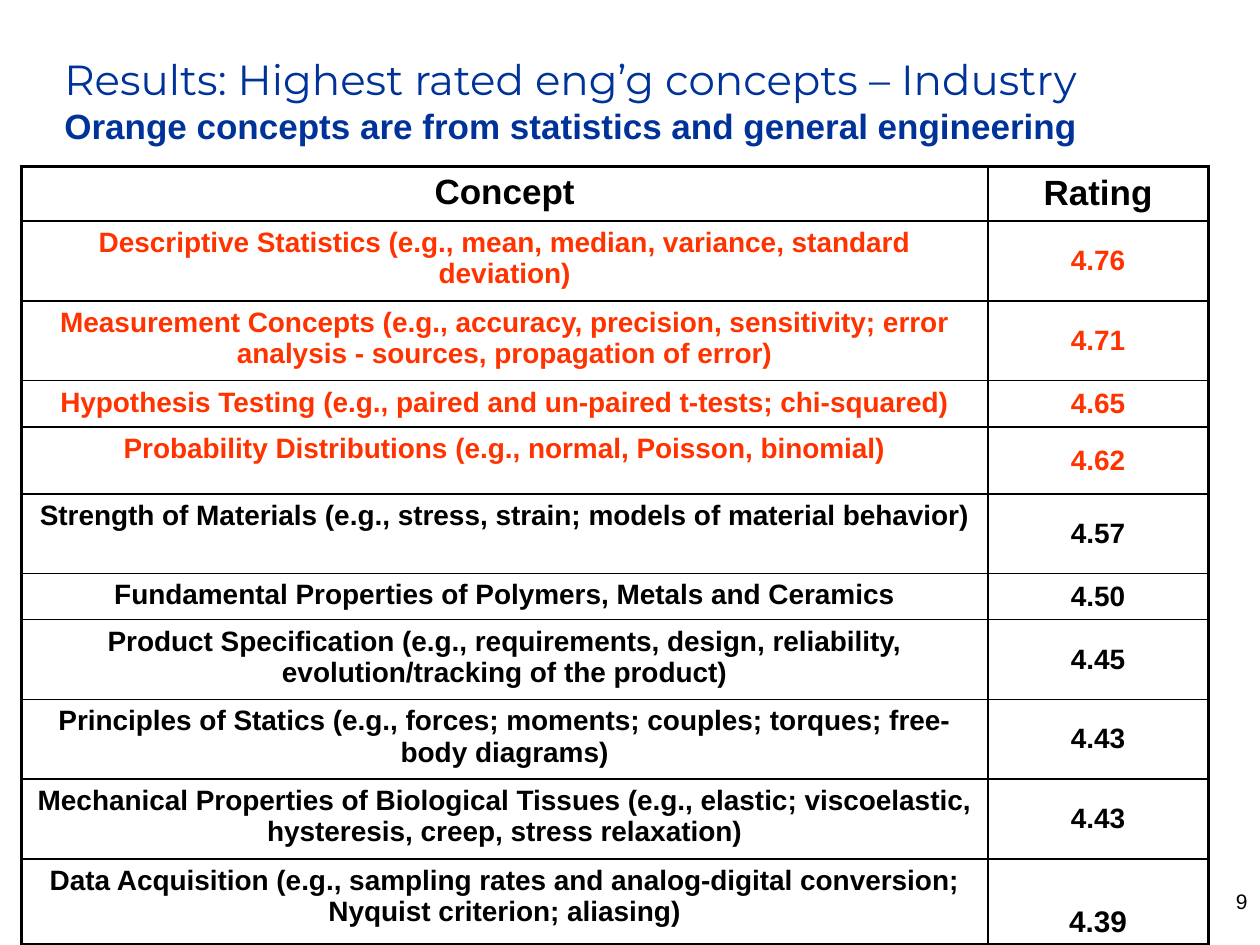
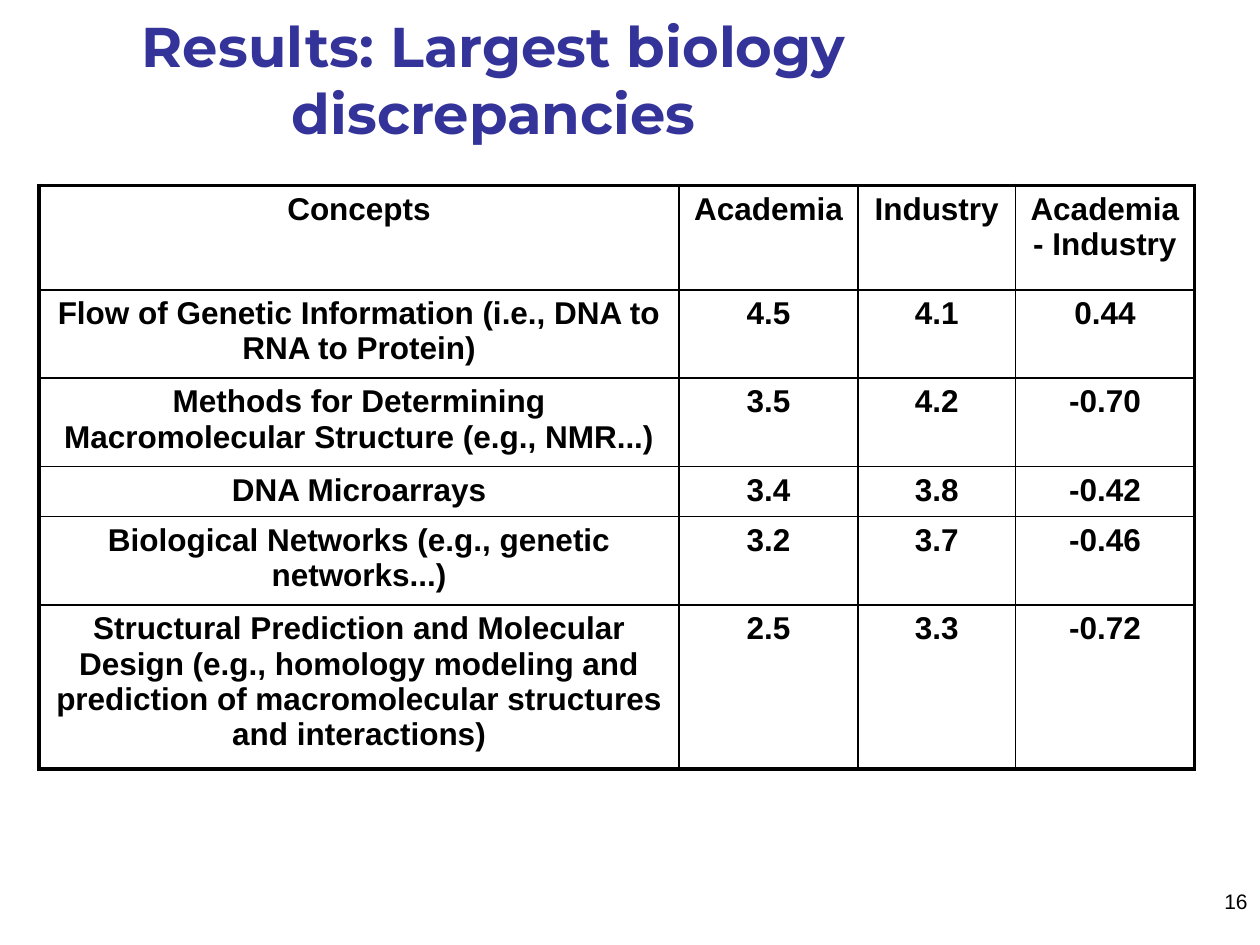
from dataclasses import dataclass

from lxml import etree
from pptx import Presentation
from pptx import util as u
from pptx.dml import color
from pptx.enum import text
from pptx.oxml import ns


@dataclass(frozen=True)
class Theme:
    black: str = "000000"
    orange: str = "FF3300"
    blue: str = "003399"
    indigo: str = "333399"
    heading: str = "Montserrat"
    body: str = "Arial"
    outer_line: float = 2.25
    inner_line: float = 1
    number_size: int = 12


THEME = Theme()
TOP = text.MSO_ANCHOR.TOP
MIDDLE = text.MSO_ANCHOR.MIDDLE
BOTTOM = text.MSO_ANCHOR.BOTTOM
LEFT = text.PP_ALIGN.LEFT
CENTER = text.PP_ALIGN.CENTER
RIGHT = text.PP_ALIGN.RIGHT

SLIDES = [
    {
        "number": 9,
        "title": [
            ("Results: Highest rated eng’g concepts – Industry", THEME.heading, 24, False),
            ("Orange concepts are from statistics and general engineering", THEME.body, 20, True),
        ],
        "title_area": (0.42, 0.67, 9.05, 0.53),
        "title_margins": (0.09, 0.04),
        "title_color": THEME.blue,
        "title_align": LEFT,
        "title_anchor": BOTTOM,
        "table_at": (0.17, 1.32),
        "columns": [7.67, 1.75],
        "heights": [0.43, 0.63, 0.63, 0.37, 0.53, 0.63, 0.36, 0.53, 0.53, 0.53, 0.68],
        "header_size": 20,
        "cell_size": 16,
        "value_anchor": MIDDLE,
        "orange_rows": range(1, 5),
        "special_cells": {(10, 1): (17, BOTTOM)},
        "rows": [
            ("Concept", "Rating"),
            ("Descriptive Statistics (e.g., mean, median, variance, standard deviation)", "4.76"),
            ("Measurement Concepts (e.g., accuracy, precision, sensitivity; error analysis"
             " - sources, propagation of error)", "4.71"),
            ("Hypothesis Testing (e.g., paired and un-paired t-tests; chi-squared)", "4.65"),
            ("Probability Distributions (e.g., normal, Poisson, binomial)", "4.62"),
            ("Strength of Materials (e.g., stress, strain; models of material behavior)", "4.57"),
            ("Fundamental Properties of Polymers, Metals and Ceramics", "4.50"),
            ("Product Specification (e.g., requirements, design, reliability,"
             " evolution/tracking of the product)", "4.45"),
            ("Principles of Statics (e.g., forces; moments; couples; torques;"
             " free-body diagrams)", "4.43"),
            ("Mechanical Properties of Biological Tissues (e.g., elastic; viscoelastic,"
             " hysteresis, creep, stress relaxation)", "4.43"),
            ("Data Acquisition (e.g., sampling rates and analog-digital conversion;"
             " Nyquist criterion; aliasing)", "4.39"),
        ],
    },
    {
        "number": 16,
        "title": [("Results: Largest biology discrepancies", THEME.heading, 32, True)],
        "title_area": (-0.33, 0, 8.5, 1.25),
        "title_margins": (0.1, 0.05),
        "title_color": THEME.indigo,
        "title_align": CENTER,
        "title_anchor": MIDDLE,
        "table_at": (0.31, 1.47),
        "columns": [5.08, 1.42, 1.25, 1.42],
        "heights": [0.83, 0.7, 0.7, 0.4, 0.7, 1.3],
        "header_size": 18,
        "cell_size": 18,
        "value_anchor": TOP,
        "orange_rows": (),
        "special_cells": {},
        "rows": [
            ("Concepts", "Academia", "Industry", "Academia - Industry"),
            ("Flow of Genetic Information (i.e., DNA to RNA to Protein)", "4.5", "4.1", "0.44"),
            ("Methods for Determining Macromolecular Structure (e.g., NMR...)",
             "3.5", "4.2", "-0.70"),
            ("DNA Microarrays", "3.4", "3.8", "-0.42"),
            ("Biological Networks (e.g., genetic networks...)", "3.2", "3.7", "-0.46"),
            ("Structural Prediction and Molecular Design (e.g., homology modeling and"
             " prediction of macromolecular structures and interactions)",
             "2.5", "3.3", "-0.72"),
        ],
    },
]


def style_paragraph(para, font, size, hue, bold, align):
    para.alignment = align
    for span in para.runs:
        span.font.name = font
        span.font.size = u.Pt(size)
        span.font.bold = bold
        span.font.color.rgb = color.RGBColor.from_string(hue)


def set_margins(frame, across, down):
    frame.margin_left = frame.margin_right = u.Inches(across)
    frame.margin_top = frame.margin_bottom = u.Inches(down)


def add_title(slide, content):
    box = slide.shapes.title
    box.left, box.top, box.width, box.height = map(u.Inches, content["title_area"])
    frame = box.text_frame
    frame.text = "\n".join(line[0] for line in content["title"])
    frame.word_wrap = True
    frame.auto_size = text.MSO_AUTO_SIZE.NONE
    frame.vertical_anchor = content["title_anchor"]
    set_margins(frame, *content["title_margins"])
    for para, (_, font, size, bold) in zip(frame.paragraphs, content["title"]):
        style_paragraph(para, font, size, content["title_color"], bold, content["title_align"])


def add_number(slide, number):
    box = slide.shapes.add_textbox(*map(u.Inches, (7.92, 7, 2.08, 0.5)))
    frame = box.text_frame
    frame.text = str(number)
    frame.word_wrap = True
    set_margins(frame, 0.1, 0.05)
    style_paragraph(frame.paragraphs[0], THEME.body, THEME.number_size, THEME.black, False, RIGHT)


def add_borders(cell, outer_edges):
    properties = cell._tc.get_or_add_tcPr()
    for position, (side, outer) in enumerate(outer_edges.items()):
        width = THEME.outer_line if outer else THEME.inner_line
        line = etree.Element(ns.qn(f"a:ln{side}"), w=str(u.Pt(width)))
        fill = etree.SubElement(line, ns.qn("a:solidFill"))
        etree.SubElement(fill, ns.qn("a:srgbClr"), val=THEME.black)
        properties.insert(position, line)


def add_table(slide, content):
    rows, columns, heights = content["rows"], content["columns"], content["heights"]
    area = (*content["table_at"], sum(columns), sum(heights))
    table = slide.shapes.add_table(len(rows), len(columns), *map(u.Inches, area)).table
    table.first_row = table.horz_banding = False
    for column, width in zip(table.columns, columns):
        column.width = u.Inches(width)
    for r, (row, height, values) in enumerate(zip(table.rows, heights, rows)):
        row.height = u.Inches(height)
        for c, value in enumerate(values):
            default = (content["cell_size"] if r else content["header_size"],
                       content["value_anchor"] if c else TOP)
            size, anchor = content["special_cells"].get((r, c), default)
            hue = THEME.orange if r in content["orange_rows"] else THEME.black
            cell = table.cell(r, c)
            cell.text = value
            cell.vertical_anchor = anchor
            set_margins(cell, 0.1, 0.05)
            cell.fill.background()
            style_paragraph(cell.text_frame.paragraphs[0], THEME.body, size, hue, True, CENTER)
            add_borders(cell, {"L": c == 0, "R": c == len(columns) - 1,
                               "T": r == 0, "B": r == len(rows) - 1})


def main():
    deck = Presentation()
    deck.slide_width, deck.slide_height = u.Inches(10), u.Inches(7.5)
    for content in SLIDES:
        page = deck.slides.add_slide(deck.slide_layouts[5])
        add_title(page, content)
        add_number(page, content["number"])
        add_table(page, content)
    deck.save("out.pptx")


if __name__ == "__main__":
    main()
